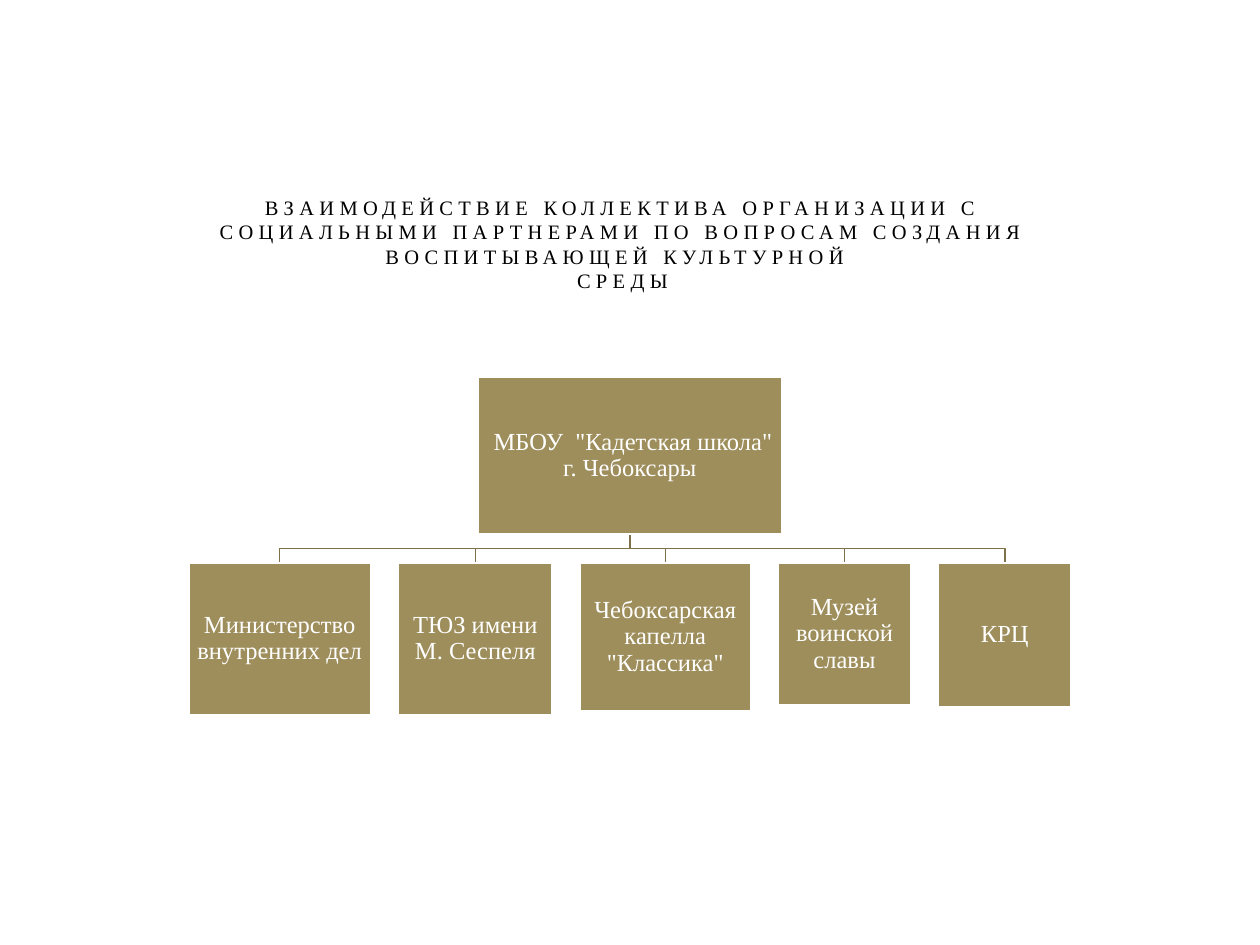
from pptx import Presentation
from pptx.dml.color import RGBColor
from pptx.enum.shapes import MSO_SHAPE
from pptx.enum.text import MSO_ANCHOR, PP_ALIGN
from pptx.util import Inches, Pt

FONT = "Times New Roman"
BLACK = RGBColor(0x00, 0x00, 0x00)
WHITE = RGBColor(0xFF, 0xFF, 0xFF)
OLIVE = RGBColor(0x9E, 0x8E, 0x5C)
BROWN = RGBColor(0x7F, 0x72, 0x4A)

TITLE = [
    "ВЗАИМОДЕЙСТВИЕ КОЛЛЕКТИВА ОРГАНИЗАЦИИ С СОЦИАЛЬНЫМИ ПАРТНЕРАМИ "
    "ПО ВОПРОСАМ СОЗДАНИЯ ВОСПИТЫВАЮЩЕЙ КУЛЬТУРНОЙ ",
    "СРЕДЫ",
]
SCHOOL = [' МБОУ  "Кадетская школа"', "г. Чебоксары"]
# name, width, height
PARTNERS = [
    ("Министерство внутренних дел", 1.44, 1.2),
    ("ТЮЗ имени М. Сеспеля", 1.22, 1.2),
    ('Чебоксарская капелла "Классика"', 1.35, 1.17),
    ("Музей воинской славы", 1.05, 1.12),
    ("КРЦ", 1.05, 1.14),
]

SLIDE_W, SLIDE_H = 10, 7.5
ROW_LEFT, ROW_RIGHT, ROW_TOP = 1.5, 8.5, 4.47
SCHOOL_W, SCHOOL_H, SCHOOL_TOP = 2.41, 1.25, 2.99
LINE_W = Pt(0.85)


def write(tf, lines, size, color, spacing):
    """Write one centred paragraph with a line break between lines."""
    tf.word_wrap = True
    tf.vertical_anchor = MSO_ANCHOR.MIDDLE
    p = tf.paragraphs[0]
    p.alignment = PP_ALIGN.CENTER
    p.line_spacing = spacing
    runs = []
    for i, line in enumerate(lines):
        if i:
            p.add_line_break()
        r = p.add_run()
        r.text = line
        r.font.name, r.font.size = FONT, Pt(size)
        r.font.color.rgb = color
        runs.append(r)
    return runs


def add_box(s, x, y, w, h, lines):
    sp = s.shapes.add_shape(MSO_SHAPE.RECTANGLE, Inches(x), Inches(y), Inches(w), Inches(h))
    sp.shadow.inherit = False
    sp.fill.solid()
    sp.fill.fore_color.rgb = OLIVE
    sp.line.color.rgb = WHITE
    sp.line.width = LINE_W
    tf = sp.text_frame
    tf.margin_left = tf.margin_right = tf.margin_top = tf.margin_bottom = Inches(0.01)
    write(tf, lines, 14, WHITE, 0.9)


def add_branch(s, x1, y1, x2, y2):
    """Draw a stepped line down, across and down again."""
    mid = (y1 + y2) / 2
    fb = s.shapes.build_freeform(Inches(x1), Inches(y1))
    points = [(x1, mid), (x2, mid), (x2, y2)]
    fb.add_line_segments([(Inches(x), Inches(y)) for x, y in points], close=False)
    sp = fb.convert_to_shape()
    sp.shadow.inherit = False
    sp.fill.background()
    sp.line.color.rgb = BROWN
    sp.line.width = LINE_W


def main():
    prs = Presentation()
    prs.slide_width, prs.slide_height = Inches(SLIDE_W), Inches(SLIDE_H)
    s = prs.slides.add_slide(prs.slide_layouts[6])

    title = s.shapes.add_textbox(Inches(1.38), Inches(0.99), Inches(7.12), Inches(1.89))
    for r in write(title.text_frame, TITLE, 11.7, BLACK, Pt(14)):
        r._r.get_or_add_rPr().set("spc", "300")

    center = SLIDE_W / 2
    gap = (ROW_RIGHT - ROW_LEFT - sum(w for _, w, _ in PARTNERS)) / (len(PARTNERS) - 1)
    x = ROW_LEFT
    for name, w, h in PARTNERS:
        add_branch(s, center, SCHOOL_TOP + SCHOOL_H, x + w / 2, ROW_TOP)
        add_box(s, x, ROW_TOP, w, h, [name])
        x += w + gap
    add_box(s, center - SCHOOL_W / 2, SCHOOL_TOP, SCHOOL_W, SCHOOL_H, SCHOOL)

    prs.save("out.pptx")


if __name__ == "__main__":
    main()
